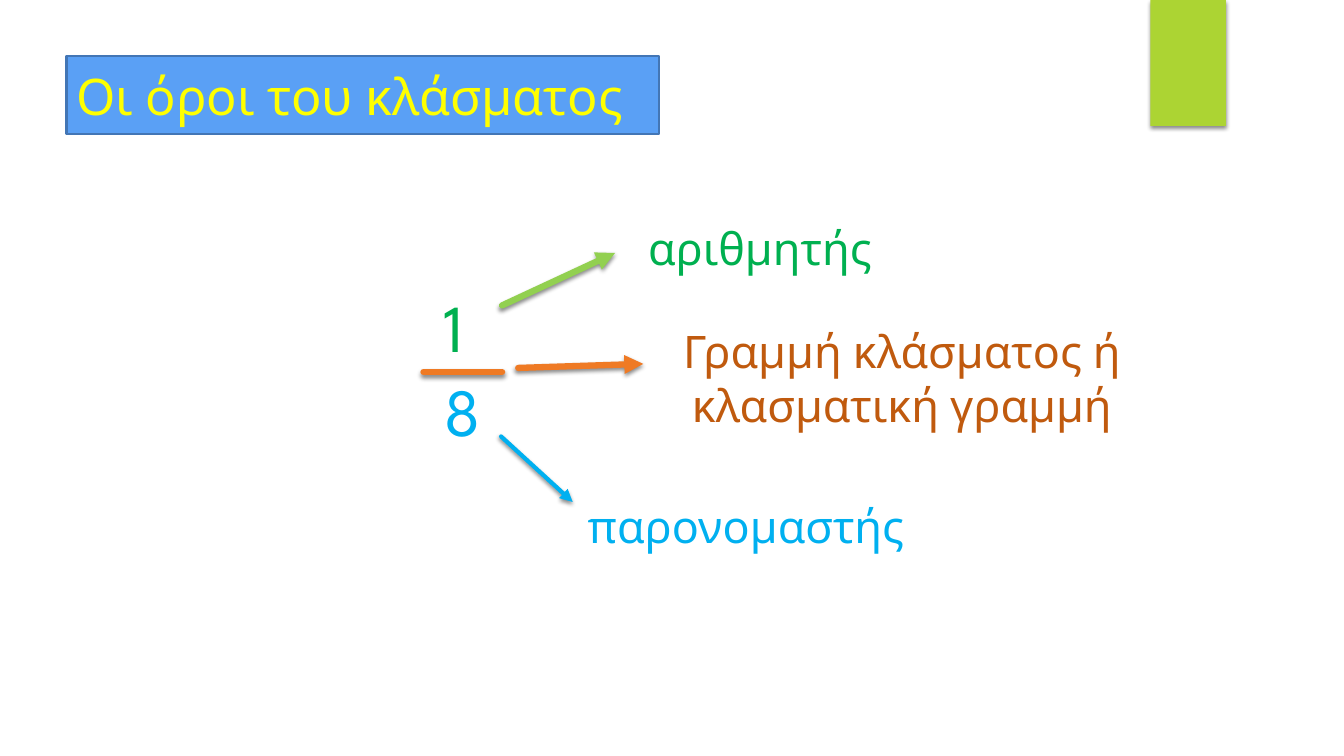
from dataclasses import dataclass

from lxml.etree import SubElement
from pptx import Presentation
from pptx.dml.color import RGBColor
from pptx.enum.shapes import MSO_CONNECTOR, MSO_SHAPE
from pptx.enum.text import MSO_ANCHOR, MSO_AUTO_SIZE, PP_ALIGN
from pptx.oxml.ns import qn
from pptx.util import Inches, Pt

FONT = "League Spartan"
GREEN, BLUE, ORANGE = "00B050", "00B0F0", "EF7A24"


@dataclass
class Label:
    text: str
    left: float
    top: float
    width: float
    height: float
    size: int
    color: str
    align: PP_ALIGN = PP_ALIGN.LEFT


@dataclass
class Stroke:
    start: tuple[float, float]
    end: tuple[float, float]
    color: str
    weight: float
    arrow: bool = True


LABELS = [
    Label("1", 4.3, 2.78, 0.6, 0.91, 48, GREEN),
    Label("8", 4.31, 3.61, 0.51, 0.91, 48, BLUE),
    Label("αριθμητής", 6.33, 2.14, 2.8, 0.64, 32, GREEN),
    Label("Γραμμή κλάσματος ή κλασματική γραμμή",
          6.54, 3.16, 4.81, 1.18, 32, "C05A0E", PP_ALIGN.CENTER),
    Label("παρονομαστής", 5.73, 4.9, 4.08, 0.64, 32, BLUE),
]

STROKES = [
    Stroke((4.2, 3.69), (4.98, 3.69), ORANGE, 4.5, arrow=False),  # fraction bar
    Stroke((4.98, 3.03), (6.1, 2.51), "92D050", 4.5),
    Stroke((5.14, 3.65), (6.38, 3.61), ORANGE, 4.5),
    Stroke((4.97, 4.33), (5.68, 4.98), BLUE, 3),
]


def rgb(color: str) -> RGBColor:
    return RGBColor.from_string(color)


def add_shadow(sp) -> None:
    effects = SubElement(sp._element.spPr, qn("a:effectLst"))
    shadow = SubElement(effects, qn("a:outerShdw"), blurRad=str(Pt(3)),
                        dist=str(Pt(2)), dir="5400000", rotWithShape="0")
    black = SubElement(shadow, qn("a:srgbClr"), val="000000")
    SubElement(black, qn("a:alpha"), val="45000")


def write(tf, text: str, size: int, color: str, align: PP_ALIGN) -> None:
    tf.word_wrap = True
    p = tf.paragraphs[0]
    p.alignment = align
    r = p.add_run()
    r.text = text
    r.font.name = FONT
    r.font.size = Pt(size)
    r.font.color.rgb = rgb(color)


def add_label(slide, label: Label) -> None:
    sp = slide.shapes.add_textbox(Inches(label.left), Inches(label.top),
                                  Inches(label.width), Inches(label.height))
    write(sp.text_frame, label.text, label.size, label.color, label.align)
    sp.text_frame.auto_size = MSO_AUTO_SIZE.SHAPE_TO_FIT_TEXT


def add_stroke(slide, stroke: Stroke) -> None:
    points = [Inches(v) for v in (*stroke.start, *stroke.end)]
    sp = slide.shapes.add_connector(MSO_CONNECTOR.STRAIGHT, *points)
    sp.line.color.rgb = rgb(stroke.color)
    sp.line.width = Pt(stroke.weight)
    ln = sp._element.spPr.find(qn("a:ln"))
    ln.set("cap", "rnd")
    if stroke.arrow:
        SubElement(ln, qn("a:tailEnd"), type="triangle")
    add_shadow(sp)


def add_accent(slide) -> None:
    sp = slide.shapes.add_shape(MSO_SHAPE.RECTANGLE, Inches(11.41), Inches(0),
                                Inches(0.75), Inches(1.25))
    sp.fill.solid()
    sp.fill.fore_color.rgb = rgb("ACD433")
    sp.line.fill.background()
    add_shadow(sp)


def format_title(slide) -> None:
    sp = slide.shapes.title
    sp.left, sp.top = Inches(0.66), Inches(0.56)
    sp.width, sp.height = Inches(5.88), Inches(0.77)
    sp.fill.solid()
    sp.fill.fore_color.rgb = rgb("5AA0F5")
    sp.line.color.rgb = rgb("4376B5")
    sp.line.width = Pt(1.5)
    tf = sp.text_frame
    tf.auto_size = MSO_AUTO_SIZE.NONE
    tf.vertical_anchor = MSO_ANCHOR.MIDDLE
    write(tf, "Οι όροι του κλάσματος", 36, "FFFF00", PP_ALIGN.LEFT)


def main() -> None:
    prs = Presentation()
    prs.slide_width, prs.slide_height = Inches(13.33), Inches(7.5)
    slide = prs.slides.add_slide(prs.slide_layouts[5])

    # Title and corner accent
    add_accent(slide)
    format_title(slide)

    # Fraction with its named parts
    for label in LABELS:
        add_label(slide, label)
    for stroke in STROKES:
        add_stroke(slide, stroke)

    prs.save("out.pptx")


if __name__ == "__main__":
    main()
